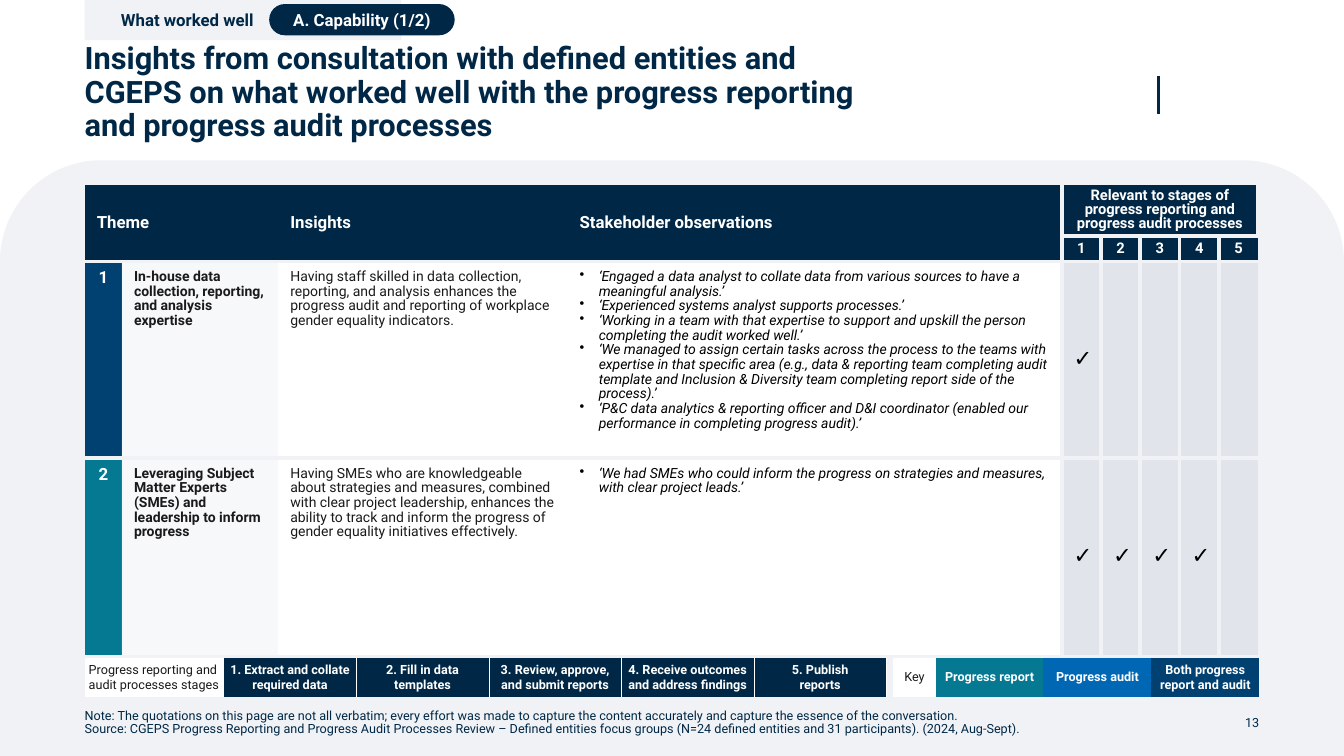
from collections import namedtuple
from lxml import etree
from pptx import Presentation
from pptx.dml.color import RGBColor
from pptx.enum.shapes import MSO_CONNECTOR, MSO_SHAPE
from pptx.enum.text import MSO_ANCHOR, MSO_AUTO_SIZE, PP_ALIGN
from pptx.oxml.ns import qn
from pptx.util import Pt

LEFT, MID, RIGHT = PP_ALIGN.LEFT, PP_ALIGN.CENTER, PP_ALIGN.RIGHT
TOP, CENTRE = MSO_ANCHOR.TOP, MSO_ANCHOR.MIDDLE
RECT, PILL = MSO_SHAPE.RECTANGLE, MSO_SHAPE.ROUNDED_RECTANGLE
DOME = MSO_SHAPE.ROUND_2_SAME_RECTANGLE
LINE = MSO_CONNECTOR.STRAIGHT
FIXED = MSO_AUTO_SIZE.NONE

Box = namedtuple("Box", "x y w h")
Theme = namedtuple("Theme", "font navy blue teal azure pale grey ink white black title head sub body small tick")
T = Theme("Roboto", "002846", "004172", "057992", "0067B4", "F0F2F5", "E1E5EB",
          "1A1A1A", "FFFFFF", "000000", 22, 12, 10.5, 10, 9, 16)
SCALE = 9144

HEADS = ["Theme", None, "Insights", "Stakeholder observations"]
STAGE = "Relevant to stages of progress reporting and progress audit processes"
ROWS = [
    (T.blue, "In-house data collection, reporting, and analysis expertise",
     "Having staff skilled in data collection, reporting, and analysis enhances the progress audit and reporting of workplace gender equality indicators.",
     ["‘Engaged a data analyst to collate data from various sources to have a meaningful analysis.’",
      "‘Experienced systems analyst supports processes.’",
      "‘Working in a team with that expertise to support and upskill the person completing the audit worked well.’",
      "‘We managed to assign certain tasks across the process to the teams with expertise in that specific area (e.g., data & reporting team completing audit template and Inclusion & Diversity team completing report side of the process).’",
      "‘P&C data analytics & reporting officer and D&I coordinator (enabled our performance in completing progress audit).’"], {1}),
    (T.teal, "Leveraging Subject Matter Experts (SMEs) and leadership to inform progress",
     "Having SMEs who are knowledgeable about strategies and measures, combined with clear project leadership, enhances the ability to track and inform the progress of gender equality initiatives effectively.",
     ["‘We had SMEs who could inform the progress on strategies and measures, with clear project leads.’"], {1, 2, 3, 4}),
]
STEPS = [["1. Extract and collate required data"], ["2. Fill in data", "templates"],
         ["3. Review, approve, and submit reports"],
         ["4. Receive outcomes and address findings"], ["5. Publish", "reports"]]
KEYS = [("Progress report", T.teal), ("Progress audit", T.azure),
        ("Both progress report and audit", T.blue)]
TITLE = "Insights from consultation with defined entities and CGEPS on what worked well with the progress reporting and progress audit processes"
NOTES = [
    "Note: The quotations on this page are not all verbatim; every effort was made to capture the content accurately and capture the essence of the conversation.",
    "Source: CGEPS Progress Reporting and Progress Audit Processes Review – Defined entities focus groups (N=24 defined entities and 31 participants). (2024, Aug-Sept).",
]


def px(n):
    return int(n * SCALE)


def rgb(code):
    return RGBColor.from_string(code)


def paint(fill, code):
    fill.solid()
    fill.fore_color.rgb = rgb(code)


def write(frame, lines, size, color, align=LEFT, space=1.0, bullet=False, indent=0, **fmt):
    for i, line in enumerate(lines):
        para = frame.paragraphs[0] if i == 0 else frame.add_paragraph()
        para.alignment, para.line_spacing = align, space
        props = para._p.get_or_add_pPr()
        if indent:
            props.set("marL", str(px(indent)))
        if bullet:
            props.set("indent", str(-px(indent)))
            etree.SubElement(props, qn("a:buChar")).set("char", "•")
        if line:
            run = para.add_run()
            run.text = line
            look = {"name": T.font, "size": Pt(size), **fmt}
            for key, value in look.items():
                setattr(run.font, key, value)
            run.font.color.rgb = rgb(color)
        etree.SubElement(para._p, qn("a:endParaRPr")).set("sz", str(int(size * 100)))


def setup(frame, inset=0):
    frame.word_wrap, frame.auto_size = True, FIXED
    frame.vertical_anchor = CENTRE
    for side in ("left", "right", "top", "bottom"):
        setattr(frame, "margin_" + side, px(inset))


def shape(slide, kind, box, color):
    item = slide.shapes.add_shape(kind, *map(px, box))
    item.shadow.inherit = False
    paint(item.fill, color)
    item.line.fill.background()
    setup(item.text_frame, 5)
    return item


def label(slide, box, lines, **fmt):
    item = slide.shapes.add_textbox(*map(px, box))
    setup(item.text_frame)
    write(item.text_frame, lines, T.small, T.navy, **fmt)


def edges(cell, sides, color, width):
    props = cell._tc.get_or_add_tcPr()
    for i, side in enumerate("LRTB"):
        line = etree.Element(qn("a:ln" + side))
        if side in sides:
            line.set("w", str(Pt(width)))
            fill = etree.SubElement(line, qn("a:solidFill"))
            etree.SubElement(fill, qn("a:srgbClr")).set("val", color)
        else:
            etree.SubElement(line, qn("a:noFill"))
        props.insert(i, line)


def cell_fill(cell, lines, back, pad=(4, 4), anchor=CENTRE, size=T.small, color=T.white, **fmt):
    paint(cell.fill, back)
    cell.margin_left = cell.margin_right = px(pad[0])
    cell.margin_top = cell.margin_bottom = px(pad[1])
    cell.vertical_anchor = anchor
    write(cell.text_frame, lines, size, color, **fmt)


def grid(slide, box, cols, rows):
    table = slide.shapes.add_table(len(rows), len(cols), *map(px, box)).table
    table.first_row = table.horz_banding = False
    for col, width in zip(table.columns, cols):
        col.width = px(width)
    for row, height in zip(table.rows, rows):
        row.height = px(height)
    return table


def top(slide, box):
    x, y, w, h = box
    tab = shape(slide, RECT, Box(x, y, 314, 40), T.pale)
    write(tab.text_frame, ["What worked well"], T.head, T.navy, indent=31, bold=True)
    pill = shape(slide, PILL, Box(x + 183, y + 4, 184, 31), T.navy)
    pill.adjustments[0] = 0.5
    write(pill.text_frame, ["A. Capability (1/2)"], T.head, T.white, MID, bold=True)
    title = slide.shapes.title
    place = dict(left=x, top=y + 49, width=787, height=87)
    for key, value in place.items():
        setattr(title, key, px(value))
    setup(title.text_frame)
    write(title.text_frame, [TITLE], T.title, T.navy, space=0.9, bold=True)
    rule = slide.shapes.add_connector(LINE, *map(px, (x + 1065, y + 75, x + 1065, y + 113)))
    rule.line.color.rgb, rule.line.width = rgb(T.navy), Pt(1.5)
    etree.SubElement(rule._element.spPr, qn("a:effectLst"))


def matrix(slide, box):
    cols, rows = [37, 155, 287, 490] + [39] * 5, [50, 25, 195, 195]
    table = grid(slide, box, cols, rows)
    head = dict(back=T.navy, pad=(12, 4), bold=True, space=0.9)
    for c in range(4):
        cell_fill(table.cell(0, c), [HEADS[c]], size=T.head, **head)
        cell_fill(table.cell(1, c), [""], T.navy, (0, 0))
    for c in range(4, 9):
        cell_fill(table.cell(0, c), [STAGE if c == 4 else ""], size=T.sub, align=MID,
                  **{**head, "space": Pt(10)})
        cell_fill(table.cell(1, c), [str(c - 3)], size=T.sub, align=MID, **head)
    text = dict(pad=(12, 8), anchor=TOP, space=0.9)
    for r, (tone, name, insight, quotes, ticks) in enumerate(ROWS, 2):
        cell_fill(table.cell(r, 0), [str(r - 1)], tone, size=T.head, align=MID, bold=True, **text)
        cell_fill(table.cell(r, 1), [name], T.white, size=T.body, color=T.ink, bold=True, **text)
        tint = table.cell(r, 1)._tc.tcPr.find(".//" + qn("a:srgbClr"))
        etree.SubElement(tint, qn("a:alpha")).set("val", "50000")
        cell_fill(table.cell(r, 2), [insight], T.white, size=T.body, color=T.ink, **text)
        cell_fill(table.cell(r, 3), quotes, T.white, size=T.body, color=T.black,
                  bullet=True, indent=19, italic=True, **text)
        for c in range(4, 9):
            cell_fill(table.cell(r, c), ["✓" if c - 3 in ticks else ""], T.grey, (12, 4),
                      size=T.tick, color=T.black, align=MID, space=0.9, italic=True)
    for r in range(4):
        for c in range(9):
            sides = ("L" if c > 3 else "") + ("R" if 2 < c < 8 else "")
            sides += ("T" if r else "") + ("B" if r < 3 else "")
            edges(table.cell(r, c), sides, T.pale, 3)
    for a, b in [((0, 0), (1, 1)), ((0, 2), (1, 2)), ((0, 3), (1, 3)), ((0, 4), (0, 8))]:
        table.cell(*a).merge(table.cell(*b))


def legend(slide, box, cols, name, align, items, sides):
    table = grid(slide, box, cols, [box.h])
    cell_fill(table.cell(0, 0), [name], T.white, color=T.ink, align=align)
    edges(table.cell(0, 0), "", T.white, 0.5)
    for c, (lines, tone) in enumerate(items, 1):
        cell_fill(table.cell(0, c), lines, tone, align=MID, bold=True)
        edges(table.cell(0, c), sides, T.white, 0.5)


def foot(slide, box):
    label(slide, Box(box.x, box.y, 1063, box.h), NOTES, space=0.9)
    label(slide, Box(box.x + box.w - 79, box.y, 79, box.h), ["13"], align=RIGHT)


def main():
    deck = Presentation()
    deck.slide_width, deck.slide_height = px(1333), px(750)
    slide = deck.slides.add_slide(deck.slide_layouts[5])
    panel = shape(slide, DOME, Box(0, 159, 1333, 591), T.pale)
    panel.adjustments[0] = 0.17
    top(slide, Box(84, 0, 1165, 159))
    matrix(slide, Box(84, 184, 1164, 465))
    legend(slide, Box(84, 653, 795, 38), [138, 131, 132, 131, 132, 131],
           "Progress reporting and audit processes stages", LEFT,
           [(step, T.navy) for step in STEPS], "LR")
    legend(slide, Box(886, 653, 363, 38), [42] + [107] * 3, "Key", MID,
           [([key], tone) for key, tone in KEYS], "")
    foot(slide, Box(84, 703, 1165, 28))
    deck.save("out.pptx")


if __name__ == "__main__":
    main()
